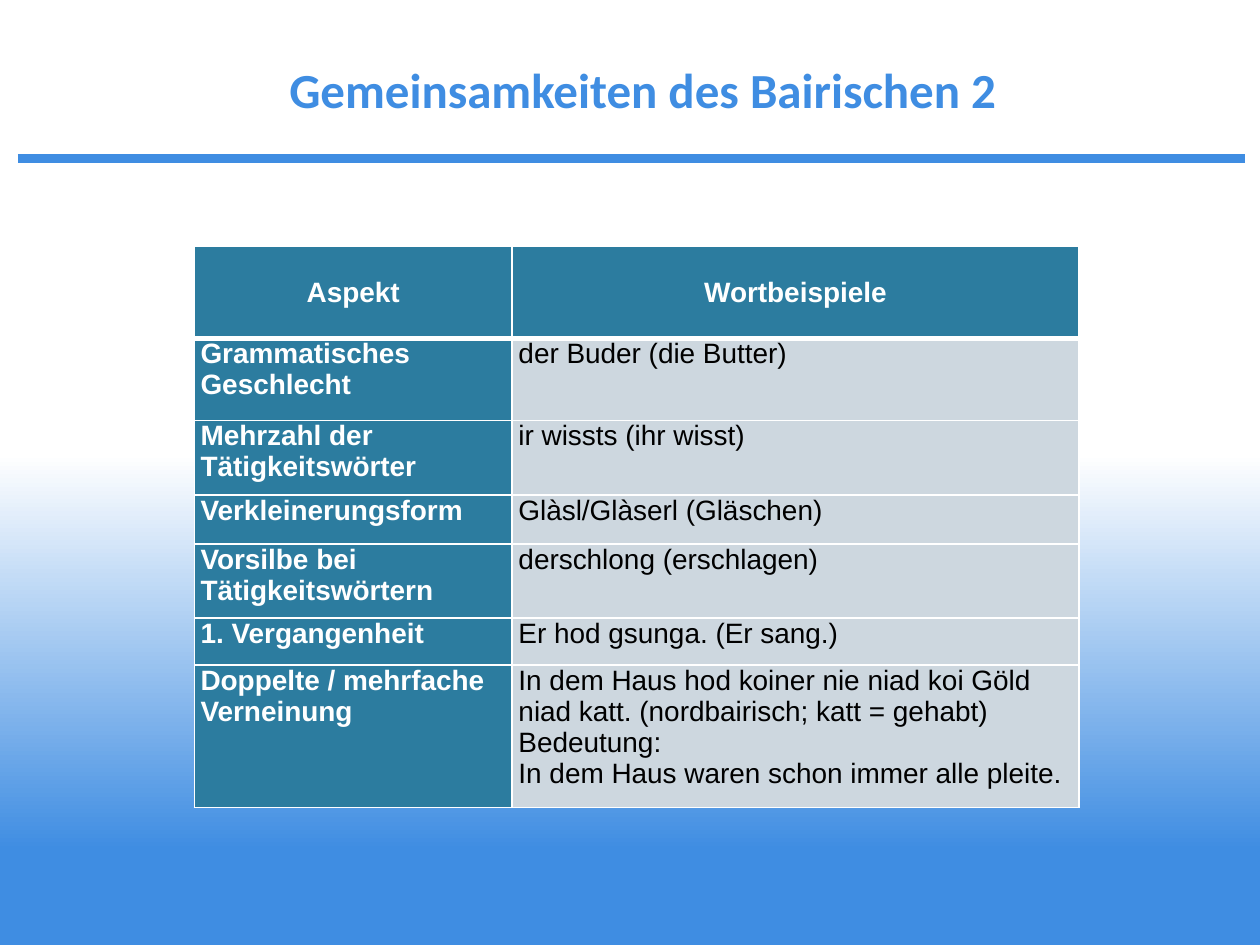
from lxml.etree import SubElement
from pptx import Presentation
from pptx.dml.color import RGBColor
from pptx.enum.text import MSO_ANCHOR, PP_ALIGN
from pptx.oxml.ns import qn
from pptx.util import Pt

BLUE, TEAL, GREY, WHITE, BLACK = "3F8DE2", "2C7C9F", "CDD7DF", "FFFFFF", "000000"
HEADER_RULE = 3
ROWS = [
    (52.5, "Aspekt", ["Wortbeispiele"]),
    (46.8, "Grammatisches Geschlecht", ["der Buder (die Butter)"]),
    (42.5, "Mehrzahl der Tätigkeitswörter", ["ir wissts (ihr wisst)"]),
    (28, "Verkleinerungsform", ["Glàsl/Glàserl (Gläschen)"]),
    (42.5, "Vorsilbe bei Tätigkeitswörtern", ["derschlong (erschlagen)"]),
    (26.7, "1. Vergangenheit", ["Er hod gsunga. (Er sang.)"]),
    (81.5, "Doppelte / mehrfache Verneinung", [
        "In dem Haus hod koiner nie niad koi Göld niad katt. (nordbairisch; katt = gehabt)",
        "Bedeutung:",
        "In dem Haus waren schon immer alle pleite."]),
]


def color(value):
    return RGBColor.from_string(value)


def set_border(cell, side, width):
    line = SubElement(cell._tc.get_or_add_tcPr(), qn(f"a:ln{side}"), w=str(Pt(width)))
    fill = SubElement(line, qn("a:solidFill"))
    SubElement(fill, qn("a:srgbClr"), val=WHITE)


deck = Presentation()
deck.slide_width, deck.slide_height = Pt(720), Pt(540)
page = deck.slides.add_slide(deck.slide_layouts[5])

# Background fades from blue at the bottom to white
background = page.background.fill
background.gradient()
background.gradient_angle = 90
for stop, position, value in zip(background.gradient_stops, (0.1, 0.52), (BLUE, WHITE)):
    stop.position = position
    stop.color.rgb = color(value)

# Title and the rule below it
title = page.shapes.title
title.left, title.top, title.width, title.height = Pt(140.4), Pt(10), Pt(453.6), Pt(61.2)
title.text_frame.vertical_anchor = MSO_ANCHOR.BOTTOM
para = title.text_frame.paragraphs[0]
para.alignment = PP_ALIGN.CENTER
span = para.add_run()
span.text = "Gemeinsamkeiten des Bairischen 2"
span.font.name, span.font.size, span.font.bold = "Calibri", Pt(28), True
span.font.color.rgb = color(BLUE)

rule = page.shapes.add_connector(1, Pt(10.2), Pt(90.5), Pt(711.4), Pt(90.5))
rule.line.color.rgb = color(BLUE)
rule.line.width = Pt(5.25)
SubElement(rule._element.spPr, qn("a:effectLst"))

# Table of aspects and examples
total_height = sum(height for height, _, _ in ROWS)
table = page.shapes.add_table(len(ROWS), 2, Pt(111), Pt(141), Pt(505.5), Pt(total_height)).table
table.columns[0].width, table.columns[1].width = Pt(181.7), Pt(323.8)

for row, (height, aspect, examples) in enumerate(ROWS):
    table.rows[row].height = Pt(height)
    for column, lines in enumerate(([aspect], examples)):
        cell = table.cell(row, column)
        is_header = row == 0
        is_strong = is_header or column == 0
        set_border(cell, "L", 1)
        set_border(cell, "R", 1)
        set_border(cell, "T", HEADER_RULE if row == 1 else 1)
        set_border(cell, "B", HEADER_RULE if is_header else 1)
        cell.fill.solid()
        cell.fill.fore_color.rgb = color(TEAL if is_strong else GREY)
        cell.margin_left = cell.margin_right = Pt(3.6)
        cell.margin_top = cell.margin_bottom = Pt(0)
        cell.vertical_anchor = MSO_ANCHOR.MIDDLE if is_header else MSO_ANCHOR.TOP
        for index, line in enumerate(lines):
            frame = cell.text_frame
            para = frame.add_paragraph() if index else frame.paragraphs[0]
            para.alignment = PP_ALIGN.CENTER if is_header else PP_ALIGN.LEFT
            span = para.add_run()
            span.text = line
            span.font.name, span.font.size, span.font.bold = "Arial", Pt(16), is_strong
            span.font.color.rgb = color(WHITE if is_strong else BLACK)

deck.save("out.pptx")
